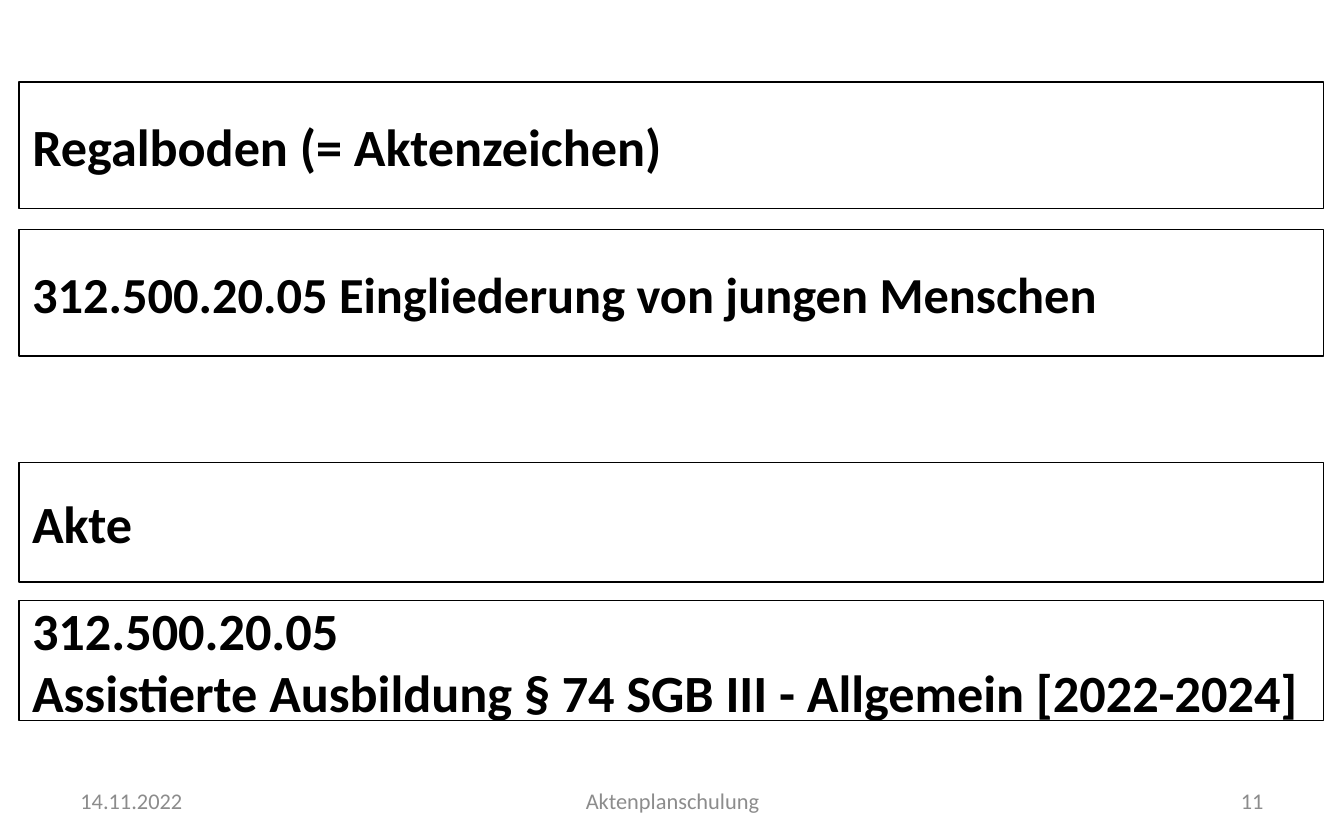
from pptx import Presentation
from pptx.dml.color import RGBColor
from pptx.enum.shapes import MSO_SHAPE as Shape
from pptx.enum.text import MSO_ANCHOR as Anchor, MSO_AUTO_SIZE as AutoSize, PP_ALIGN as Align
from pptx.util import Inches, Pt

COLORS = {"text": "000000", "border": "000000", "footer": "8C8C8C"}
FONT = "Calibri"
BOX_LEFT, BOX_WIDTH = 0.14, 9.71
SHELF_HEIGHT, FILE_HEIGHT = 0.94, 0.89
FOOTER_TOP, FOOTER_HEIGHT = 5.79, 0.33


def color(name):
    return RGBColor.from_string(COLORS[name])


def write(shape, text, size, color_name, align=Align.LEFT, bold=False):
    frame = shape.text_frame
    frame.text = text
    frame.word_wrap = True
    frame.auto_size = AutoSize.NONE
    frame.vertical_anchor = Anchor.MIDDLE
    for paragraph in frame.paragraphs:
        paragraph.alignment = align
        for run in paragraph.runs:
            run.font.name = FONT
            run.font.size = Pt(size)
            run.font.bold = bold
            run.font.color.rgb = color(color_name)


def format_box(box, text, size=28):
    box.fill.background()
    box.line.color.rgb = color("border")
    box.line.width = Pt(0.75)
    write(box, text, size, "text", bold=True)


def add_title(slide, top, height, text):
    title = slide.shapes.title
    title.left, title.top = Inches(BOX_LEFT), Inches(top)
    title.width, title.height = Inches(BOX_WIDTH), Inches(height)
    format_box(title, text)


def add_box(slide, top, height, text, size=28):
    box = slide.shapes.add_shape(Shape.RECTANGLE, Inches(BOX_LEFT), Inches(top),
                                 Inches(BOX_WIDTH), Inches(height))
    box.shadow.inherit = False
    format_box(box, text, size)


def add_footer(slide, left, width, text, align):
    footer = slide.shapes.add_textbox(Inches(left), Inches(FOOTER_TOP),
                                      Inches(width), Inches(FOOTER_HEIGHT))
    write(footer, text, 12, "footer", align)


def main():
    prs = Presentation()
    prs.slide_width, prs.slide_height = Inches(10), Inches(6.25)
    slide = prs.slides.add_slide(prs.slide_layouts[5])

    # Shelf label and its example
    add_title(slide, 0.61, SHELF_HEIGHT, "Regalboden (= Aktenzeichen)")
    add_box(slide, 1.71, SHELF_HEIGHT,
            "312.500.20.05 Eingliederung von jungen Menschen", size=27)

    # File label and its example
    add_box(slide, 3.44, FILE_HEIGHT, "Akte")
    add_box(slide, 4.47, FILE_HEIGHT,
            "312.500.20.05\nAssistierte Ausbildung § 74 SGB III - Allgemein [2022-2024]")

    # Footer: date, topic, page number
    add_footer(slide, 0.5, 2.33, "14.11.2022", Align.LEFT)
    add_footer(slide, 3.42, 3.17, "Aktenplanschulung", Align.CENTER)
    add_footer(slide, 7.17, 2.33, "11", Align.RIGHT)

    prs.save("out.pptx")


if __name__ == "__main__":
    main()
